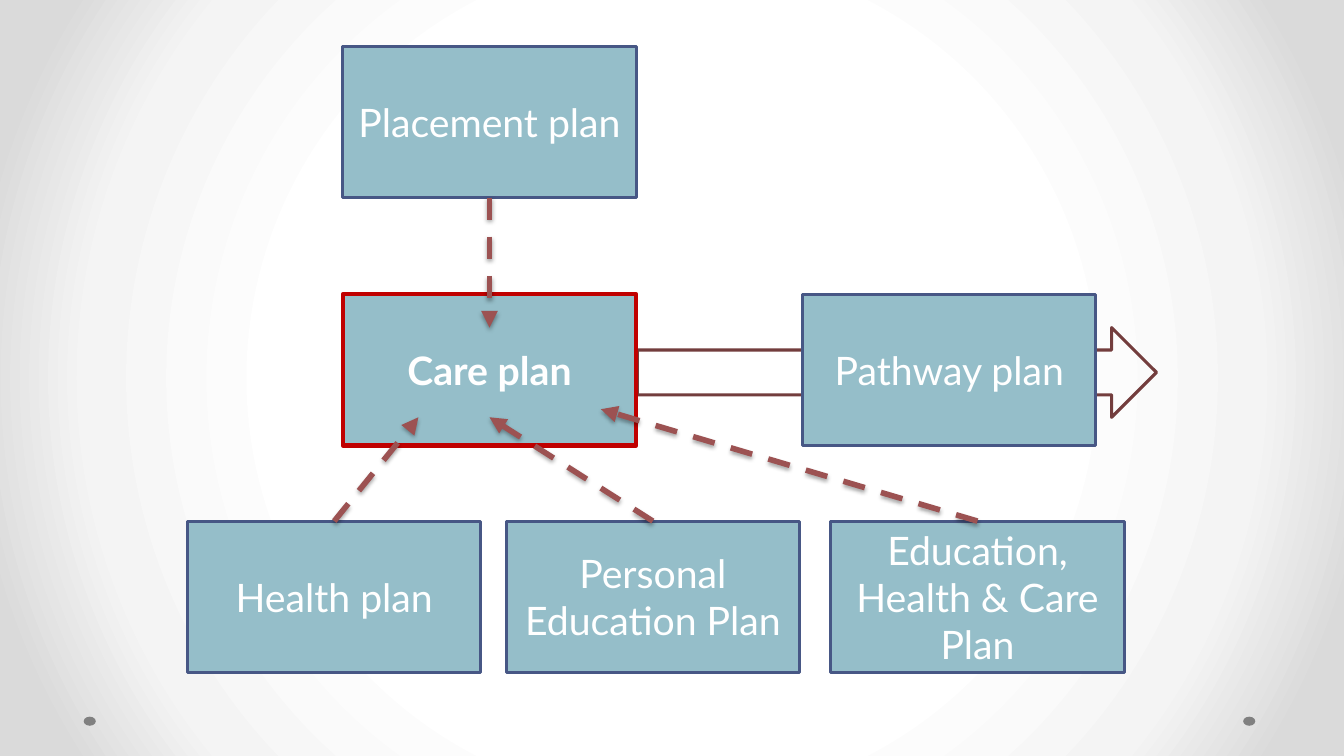
import pptx
import pptx.util
import pptx.dml.color
import pptx.enum.dml
import pptx.enum.shapes
import pptx.enum.text
import pptx.oxml

INCH = pptx.util.Inches
KIND = pptx.enum.shapes.MSO_SHAPE
NS = 'xmlns:a="http://schemas.openxmlformats.org/drawingml/2006/main"'

WIDE, HIGH = 13.33, 7.5
BOX_W, BOX_H = 2.91, 1.5
ROWS = [0.46, 2.92, 5.17]
MID = 3.4
TOP, BASE = 0, 2

PLANS = {
    "Care plan": (MID, 1),
    "Health plan": (1.86, 2),
    "Personal Education Plan": (5.02, 2),
    "Pathway plan": (7.96, 1),
    "Placement plan": (MID, 0),
    "Education, Health & Care Plan": (8.24, 2),
}
MAIN = "Care plan"
LINKS = [
    ("Health plan", TOP, 4.15, 4.14),
    ("Personal Education Plan", TOP, MID + BOX_W / 2, 4.14),
    ("Placement plan", BASE, MID + BOX_W / 2, 3.25),
    ("Education, Health & Care Plan", TOP, 5.96, 4.06),
]
STOPS = [(50, "FFFFFF"), (76, "F4F4F4"), (92, "DADADA")]
DOT_W, DOT_H, DOT_Y = 0.12, 0.09, 7.11
DOTS = [0.83, 12.33]


def tint(code):
    return pptx.dml.color.RGBColor.from_string(code)


def shape(kind, left, top, wide, high, fill=None, line=None, width=0):
    form = slide.shapes.add_shape(
        kind, INCH(left), INCH(top), INCH(wide), INCH(high))
    form.shadow.inherit = False
    if fill:
        form.fill.solid()
        form.fill.fore_color.rgb = tint(fill)
    else:
        form.fill.background()
    if line:
        form.line.color.rgb = tint(line)
        form.line.width = pptx.util.Pt(width)
    else:
        form.line.fill.background()
    return form


def paint():
    slide.background.fill.gradient()
    old = next(slide.element.iter("{*}gradFill"))
    stops = "".join(
        f'<a:gs pos="{share * 1000}"><a:srgbClr val="{code}"/></a:gs>'
        for share, code in STOPS)
    new = pptx.oxml.parse_xml(
        f'<a:gradFill {NS} rotWithShape="1"><a:gsLst>{stops}</a:gsLst>'
        '<a:path path="circle"><a:fillToRect l="50000" t="50000" '
        'r="50000" b="50000"/></a:path></a:gradFill>')
    old.getparent().replace(old, new)


def plan(name, left, row):
    main = name == MAIN
    box = shape(KIND.RECTANGLE, left, ROWS[row], BOX_W, BOX_H, "95BEC9",
                "C00000" if main else "475785", 3 if main else 2.25)
    frame = box.text_frame
    frame.word_wrap = True
    frame.vertical_anchor = pptx.enum.text.MSO_ANCHOR.MIDDLE
    frame.text = name
    para = frame.paragraphs[0]
    para.alignment = pptx.enum.text.PP_ALIGN.CENTER
    font = para.runs[0].font
    font.name = "Lato"
    font.size = pptx.util.Pt(28)
    font.bold = main
    font.color.rgb = tint("FFFFFF")
    return box


def link(box, side, x, y):
    line = slide.shapes.add_connector(
        pptx.enum.shapes.MSO_CONNECTOR.STRAIGHT,
        box.left + box.width // 2, box.top + box.height * side // 2,
        INCH(x), INCH(y))
    line.begin_connect(box, side)
    line.line.color.rgb = tint("9C5252")
    line.line.width = pptx.util.Pt(4)
    line.line.dash_style = pptx.enum.dml.MSO_LINE.DASH
    props = next(line.element.iter("{*}spPr"))
    next(props.iter("{*}ln")).append(
        pptx.oxml.parse_xml(f'<a:tailEnd {NS} type="triangle"/>'))
    blur, dist = pptx.util.Pt(3.1), pptx.util.Pt(1.8)
    props.append(pptx.oxml.parse_xml(
        f'<a:effectLst {NS}><a:outerShdw blurRad="{blur}" dist="{dist}" '
        'dir="5400000" rotWithShape="0"><a:srgbClr val="000000">'
        '<a:alpha val="35000"/></a:srgbClr></a:outerShdw></a:effectLst>'))


deck = pptx.Presentation()
deck.slide_width, deck.slide_height = INCH(WIDE), INCH(HIGH)
slide = deck.slides.add_slide(deck.slide_layouts[6])

paint()
for left in DOTS:
    shape(KIND.OVAL, left, DOT_Y, DOT_W, DOT_H, "808080")
shape(KIND.RIGHT_ARROW, 6.32, 3.25, 5.15, 0.89, line="733D3D", width=2.25)
boxes = {name: plan(name, *spot) for name, spot in PLANS.items()}
for name, side, x, y in LINKS:
    link(boxes[name], side, x, y)

deck.save("out.pptx")
